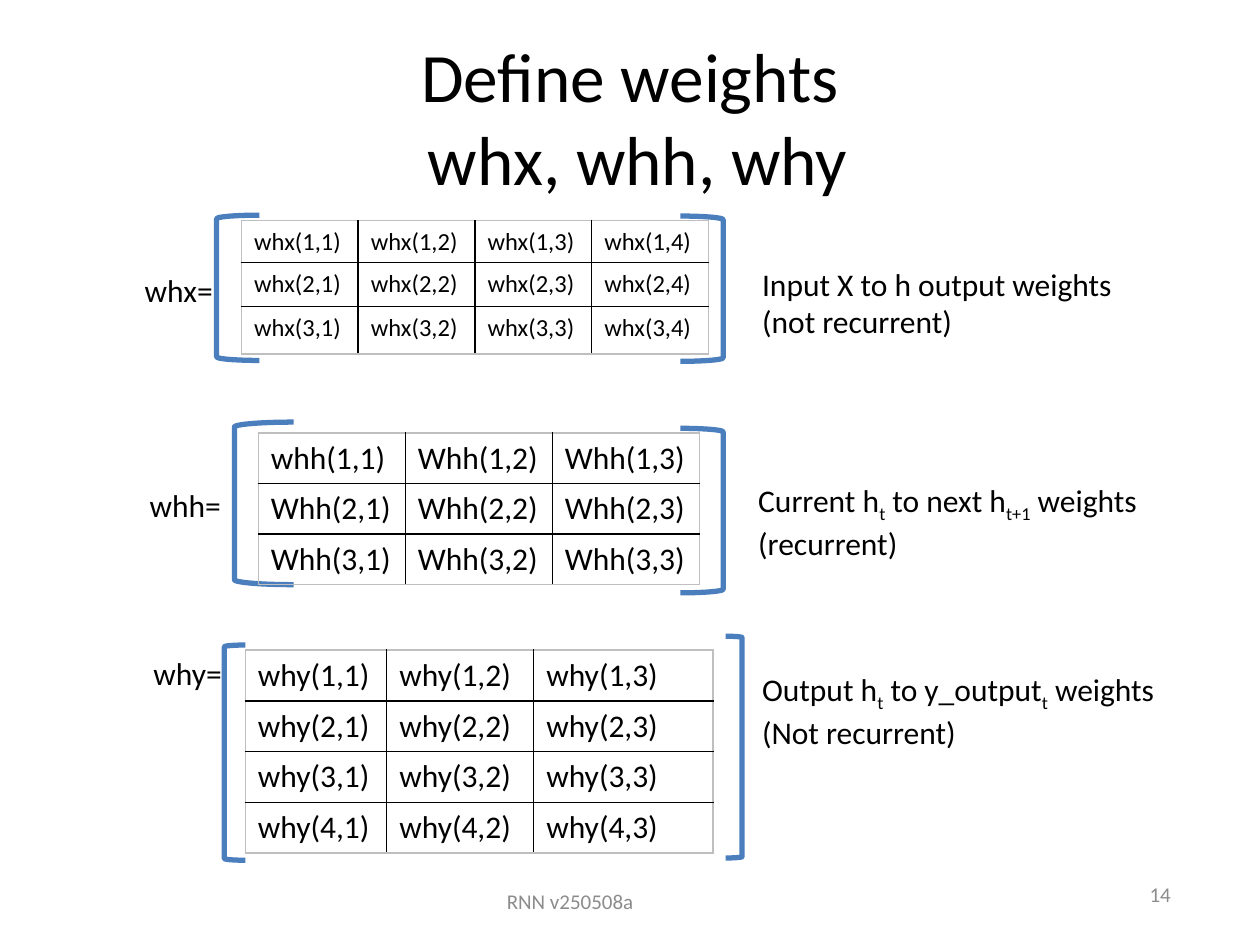
from lxml import etree
from pptx import Presentation
from pptx import util as u
from pptx.dml.color import RGBColor
from pptx.enum import shapes, text
from pptx.oxml.ns import qn

COLORS = {"ink": "000000", "muted": "8C8C8C", "bracket": "4B7EBC", "edge": "BFBFBF"}
FONT = "Calibri"
TITLE = "Define weights\v whx, whh, why"

# Boxes are (left, top, width, height); "|" switches subscript on and off in notes.
MATRICES = [
    {"label": "whx=", "label_box": (75.6, 151.2, 54, 28.8),
     "names": [["whx"] * 4] * 3, "size": 14, "origin": (138, 126),
     "cols": [66.7] * 4, "rows": [24, 25.2, 27.2],
     "left": (123.8, 123, 24.5, 83), "right": (388.8, 123.5, 24.5, 83),
     "note": ["Input X to h output weights", "(not recurrent)"],
     "note_box": (428.4, 147.6, 216.7, 51)},
    {"label": "whh=", "label_box": (78.5, 274.3, 56, 28.8),
     "names": [["whh", "Whh", "Whh"], ["Whh"] * 3, ["Whh"] * 3],
     "size": 18, "origin": (147.6, 247.4),
     "cols": [84] * 3, "rows": [28.8] * 3,
     "left": (134, 241.2, 33.8, 92.9), "right": (388.8, 244.8, 24.5, 94),
     "note": ["Current h|t| to next h|t+1| weights", "(recurrent)"],
     "note_box": (426.2, 271.4, 236.2, 51)},
    {"label": "why=", "label_box": (80.6, 370, 54, 28.8),
     "names": [["why"] * 3] * 4, "size": 18, "origin": (140.2, 371.5),
     "cols": [80.8, 84, 102.4], "rows": [29] * 4,
     "left": (128.2, 368.6, 12, 123), "right": (414.7, 363.6, 9.4, 126.7),
     "note": ["Output h|t| to y_output|t| weights", "(Not recurrent)"],
     "note_box": (428.4, 379.4, 244, 51)},
]
FOOTERS = [
    ("RNN v250508a", (211.7, 500.4, 228.2, 28.8), text.PP_ALIGN.CENTER),
    ("14", (508.3, 496.8, 167.8, 28.8), text.PP_ALIGN.RIGHT),
]


def pts(values):
    return [u.Pt(v) for v in values]


def write(tf, lines, size=18, color="ink", align=text.PP_ALIGN.LEFT,
          anchor=text.MSO_ANCHOR.TOP, wrap=True):
    """Fill a text frame with lines; the odd pieces between bars are subscripts."""
    tf.word_wrap = wrap
    tf.vertical_anchor = anchor
    for i, line in enumerate(lines):
        p = tf.paragraphs[0] if i == 0 else tf.add_paragraph()
        p.alignment = align
        for j, piece in enumerate(line.split("|")):
            for k, part in enumerate(piece.split("\v")):
                if k:
                    p.add_line_break()
                r = p.add_run()
                r.text = part
                r.font.size, r.font.name = u.Pt(size), FONT
                r.font.color.rgb = RGBColor.from_string(COLORS[color])
                if j % 2:
                    r._r.get_or_add_rPr().set("baseline", "-25000")


def add_text(s, lines, box, **fmt):
    write(s.shapes.add_textbox(*pts(box)).text_frame, lines, **fmt)


def add_bracket(s, box, flip=False):
    sp = s.shapes.add_shape(shapes.MSO_SHAPE.LEFT_BRACKET, *pts(box))
    sp.shadow.inherit = False
    sp.fill.background()
    sp.line.color.rgb = RGBColor.from_string(COLORS["bracket"])
    sp.line.width = u.Pt(3)
    if flip:
        sp._element.spPr.get_or_add_xfrm().set("flipH", "1")


def set_borders(cell, outer):
    """Draw the four sides of a cell, with the edge colour on the outer ones."""
    tc_pr = cell._tc.get_or_add_tcPr()
    for side, is_outer in outer.items():
        ln = etree.SubElement(tc_pr, qn("a:ln" + side), w=str(u.Pt(1)))
        fill = etree.SubElement(ln, qn("a:solidFill"))
        etree.SubElement(fill, qn("a:srgbClr"), val=COLORS["edge" if is_outer else "ink"])


def add_matrix(s, m):
    cols, rows = m["cols"], m["rows"]
    box = (*m["origin"], sum(cols), sum(rows))
    table = s.shapes.add_table(len(rows), len(cols), *pts(box)).table
    table.first_row = table.horz_banding = False
    for col, width in zip(table.columns, pts(cols)):
        col.width = width
    for row, height in zip(table.rows, pts(rows)):
        row.height = height
    for i, names in enumerate(m["names"]):
        for j, name in enumerate(names):
            cell = table.cell(i, j)
            write(cell.text_frame, [f"{name}({i + 1},{j + 1})"], size=m["size"])
            set_borders(cell, {"L": j == 0, "R": j == len(cols) - 1,
                               "T": i == 0, "B": i == len(rows) - 1})
            cell.fill.background()


def main():
    prs = Presentation()
    prs.slide_width, prs.slide_height = pts((720, 540))
    s = prs.slides.add_slide(prs.slide_layouts[5])
    title = s.shapes.title
    title.left, title.top, title.width, title.height = pts((36, 21.6, 648, 90))
    write(title.text_frame, [TITLE], size=39.6, align=text.PP_ALIGN.CENTER,
          anchor=text.MSO_ANCHOR.MIDDLE)
    for m in MATRICES:
        add_text(s, [m["label"]], m["label_box"], wrap=False)
        add_bracket(s, m["left"])
        add_bracket(s, m["right"], flip=True)
        add_matrix(s, m)
        add_text(s, m["note"], m["note_box"], wrap=False)
    for line, box, align in FOOTERS:
        add_text(s, [line], box, size=12, color="muted", align=align,
                 anchor=text.MSO_ANCHOR.MIDDLE)
    prs.save("out.pptx")


if __name__ == "__main__":
    main()
